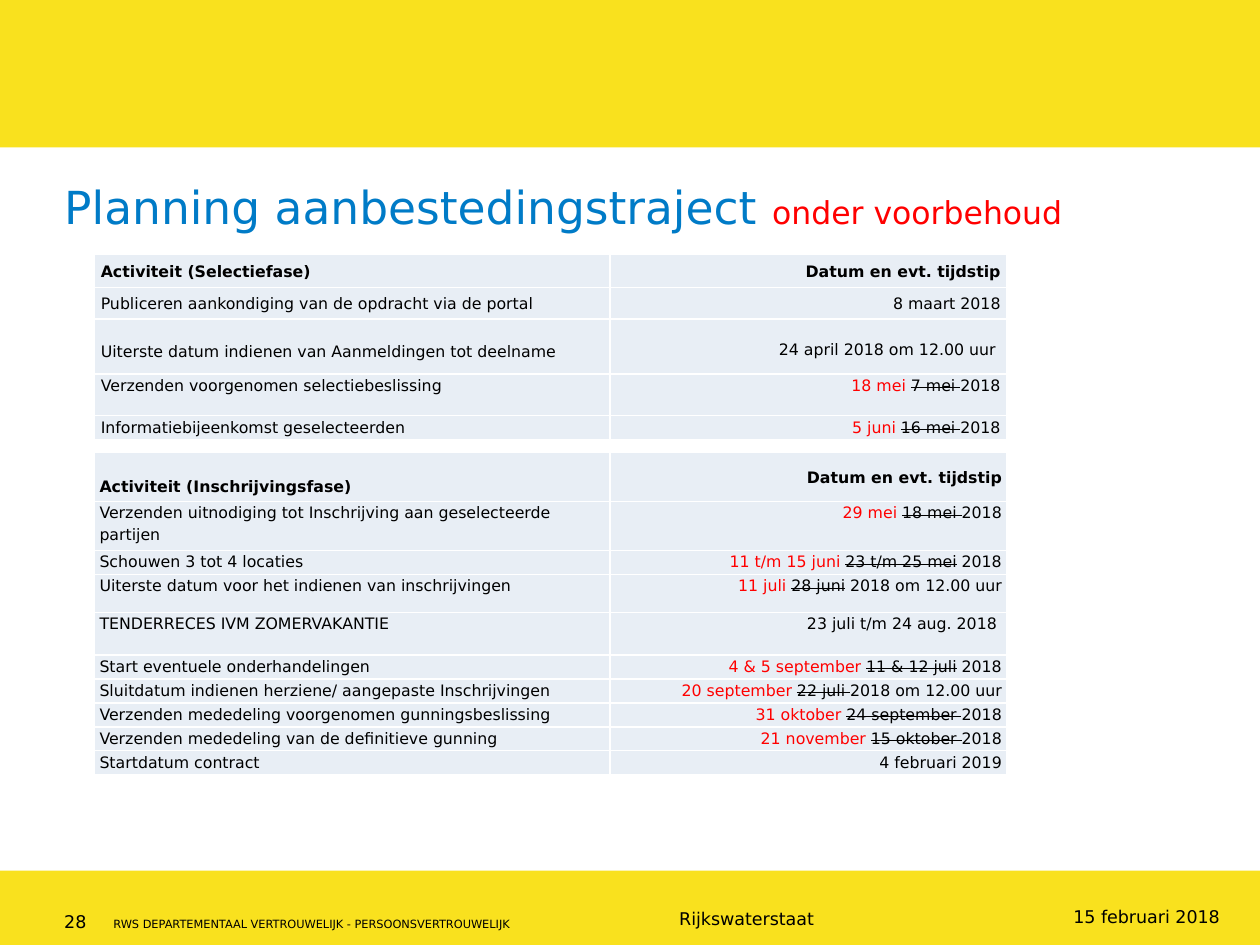
from dataclasses import dataclass

from lxml import etree
from pptx import Presentation
from pptx.dml.color import RGBColor
from pptx.enum.shapes import MSO_SHAPE
from pptx.enum.text import MSO_ANCHOR, PP_ALIGN
from pptx.oxml.ns import qn
from pptx.util import Inches, Pt

RECTANGLE = MSO_SHAPE.RECTANGLE
TOP, MIDDLE = MSO_ANCHOR.TOP, MSO_ANCHOR.MIDDLE
LEFT, RIGHT = PP_ALIGN.LEFT, PP_ALIGN.RIGHT

YELLOW, BLUE, RED = "F9E11E", "007BC7", "FF0000"
BLACK, WHITE, PALE = "000000", "FFFFFF", "E8EEF5"


def colour(value):
    """Turn a hex string into a colour."""
    return RGBColor.from_string(value)


@dataclass
class Row:
    """One activity with its date, or a (new, struck, rest) date."""
    height: float
    activity: str
    date: str | tuple
    anchor: MSO_ANCHOR = TOP
    drops: tuple = (0, 0)


SELECTION = [
    Row(0.26, "Activiteit (Selectiefase)", "Datum en evt. tijdstip", MIDDLE),
    Row(0.25, "Publiceren aankondiging van de opdracht via de portal",
        "8 maart 2018", MIDDLE),
    Row(0.44, "Uiterste datum indienen van Aanmeldingen tot deelname",
        "24 april 2018 om 12.00 uur ", MIDDLE, (0.07, 0.04)),
    Row(0.33, "Verzenden voorgenomen selectiebeslissing",
        ("18 mei ", "7 mei ", "2018")),
    Row(0.19, "Informatiebijeenkomst geselecteerden",
        ("5 juni ", "16 mei ", "2018")),
]
TENDER = [
    Row(0.39, "Activiteit (Inschrijvingsfase)", "Datum en evt. tijdstip",
        MIDDLE, (0.14, 0)),
    Row(0.39, "Verzenden uitnodiging tot Inschrijving aan geselecteerde partijen",
        ("29 mei ", "18 mei ", "2018")),
    Row(0.19, "Schouwen 3 tot 4 locaties",
        ("11 t/m 15 juni ", "23 t/m 25 mei", " 2018")),
    Row(0.3, "Uiterste datum voor het indienen van inschrijvingen",
        ("11 juli ", "28 juni", " 2018 om 12.00 uur")),
    Row(0.34, "TENDERRECES IVM ZOMERVAKANTIE", "23 juli t/m 24 aug. 2018 "),
    Row(0.19, "Start eventuele onderhandelingen",
        ("4 & 5 september ", "11 & 12 juli", " 2018")),
    Row(0.19, "Sluitdatum indienen herziene/ aangepaste Inschrijvingen",
        ("20 september ", "22 juli ", "2018 om 12.00 uur")),
    Row(0.19, "Verzenden mededeling voorgenomen gunningsbeslissing",
        ("31 oktober ", "24 september ", "2018")),
    Row(0.19, "Verzenden mededeling van de definitieve gunning",
        ("21 november ", "15 oktober ", "2018")),
    Row(0.19, "Startdatum contract", "4 februari 2019"),
]


class SlideBuilder:
    """Hold the style and the slide being built."""

    font_name = "DejaVu Sans"
    table_left = 0.75
    column_widths = (4.09, 3.15)

    def __init__(self, slide):
        """Keep the slide to draw on."""
        self.slide = slide

    def style(self, font, size, value=BLACK, bold=False):
        """Apply the house font."""
        font.name, font.size, font.bold = self.font_name, Pt(size), bold
        font.color.rgb = colour(value)

    def band(self, top, height):
        """Draw a yellow band across the slide."""
        shape = self.slide.shapes.add_shape(
            RECTANGLE, 0, Inches(top), Inches(10), Inches(height))
        shape.shadow.inherit = False
        shape.fill.solid()
        shape.fill.fore_color.rgb = colour(YELLOW)
        shape.line.fill.background()

    def text(self, left, top, width, height, words, size,
             value=BLACK, align=LEFT, wrap=True):
        """Add a one-line text box without margins and return its paragraph."""
        box = self.slide.shapes.add_textbox(
            Inches(left), Inches(top), Inches(width), Inches(height))
        frame = box.text_frame
        frame.word_wrap = wrap
        frame.margin_left = frame.margin_right = 0
        frame.margin_top = frame.margin_bottom = 0
        paragraph = frame.paragraphs[0]
        paragraph.alignment = align
        paragraph.add_run().text = words
        self.style(paragraph.font, size, value)
        return paragraph

    def borders(self, cell):
        """Give a cell thin white borders."""
        properties = cell._tc.get_or_add_tcPr()
        for index, side in enumerate(("lnL", "lnR", "lnT", "lnB")):
            line = etree.Element(qn(f"a:{side}"), w=str(Pt(1)))
            fill = etree.SubElement(line, qn("a:solidFill"))
            etree.SubElement(fill, qn("a:srgbClr"), val=WHITE)
            properties.insert(index, line)

    def cell(self, cell, content, align, anchor, margin, drop, bold):
        """Fill one table cell."""
        cell.fill.solid()
        cell.fill.fore_color.rgb = colour(PALE)
        self.borders(cell)
        cell.vertical_anchor = anchor
        cell.margin_left = cell.margin_right = Inches(margin)
        cell.margin_top, cell.margin_bottom = Inches(drop), 0
        paragraph = cell.text_frame.paragraphs[0]
        paragraph.alignment, paragraph.line_spacing = align, 1.15
        self.style(paragraph.font, 9, BLACK, bold)
        if isinstance(content, str):
            paragraph.add_run().text = content
            return
        new, struck, rest = [paragraph.add_run() for _ in content]
        new.text, struck.text, rest.text = content
        new.font.color.rgb = colour(RED)
        struck._r.get_or_add_rPr().set("strike", "sngStrike")

    def table(self, top, margin, rows):
        """Add a planning table with a bold first row."""
        table = self.slide.shapes.add_table(
            len(rows), 2, Inches(self.table_left), Inches(top),
            Inches(sum(self.column_widths)),
            Inches(sum(row.height for row in rows))).table
        table.first_row = table.horz_banding = False
        for column, width in zip(table.columns, self.column_widths):
            column.width = Inches(width)
        for index, row in enumerate(rows):
            table.rows[index].height = Inches(row.height)
            columns = zip((row.activity, row.date), (LEFT, RIGHT), row.drops)
            for position, (content, align, drop) in enumerate(columns):
                self.cell(table.cell(index, position), content, align,
                          row.anchor, margin, drop, index == 0)


def main():
    """Build the planning slide."""
    presentation = Presentation()
    presentation.slide_width = Inches(10)
    presentation.slide_height = Inches(7.5)
    builder = SlideBuilder(
        presentation.slides.add_slide(presentation.slide_layouts[6]))
    builder.band(6.91, 0.59)
    builder.band(0, 1.17)
    builder.text(5.39, 7.21, 3.45, 0.13, "Rijkswaterstaat", 10)
    builder.text(0.51, 7.23, 0.35, 0.13, "28", 10)
    builder.text(0.9, 7.28, 3.31, 0.16,
                 "RWS DEPARTEMENTAAL VERTROUWELIJK - PERSOONSVERTROUWELIJK", 6.5)
    title = builder.text(0.51, 1.42, 9.19, 0.44,
                         "Planning aanbestedingstraject ", 26, BLUE)
    reservation = title.add_run()
    reservation.text = "onder voorbehoud"
    builder.style(reservation.font, 18, RED)
    builder.table(2.02, 0.05, SELECTION)
    builder.table(3.59, 0.04, TENDER)
    builder.text(8.39, 7.19, 1.29, 0.17, "15 februari 2018", 10, align=RIGHT)
    presentation.save("out.pptx")


if __name__ == "__main__":
    main()
